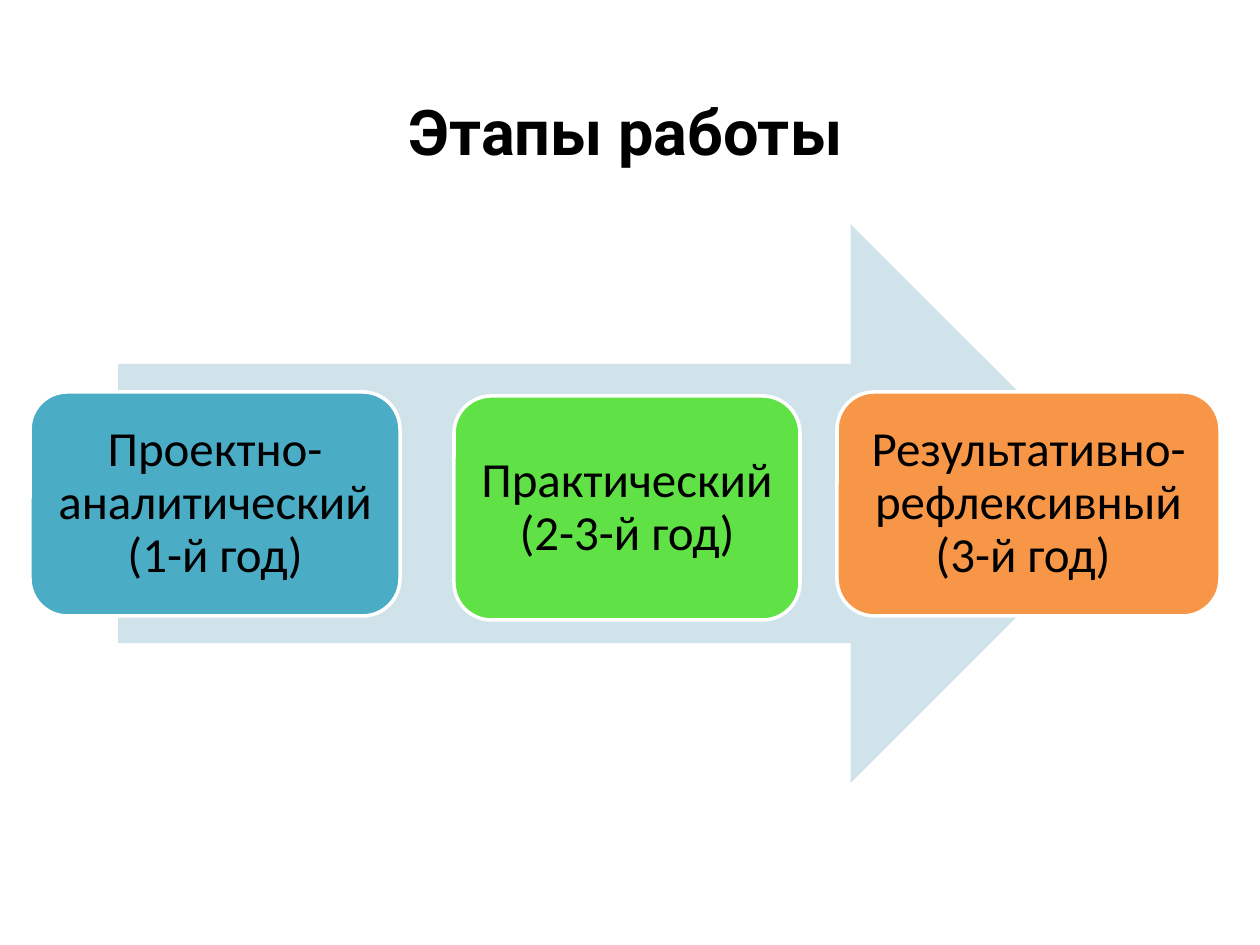
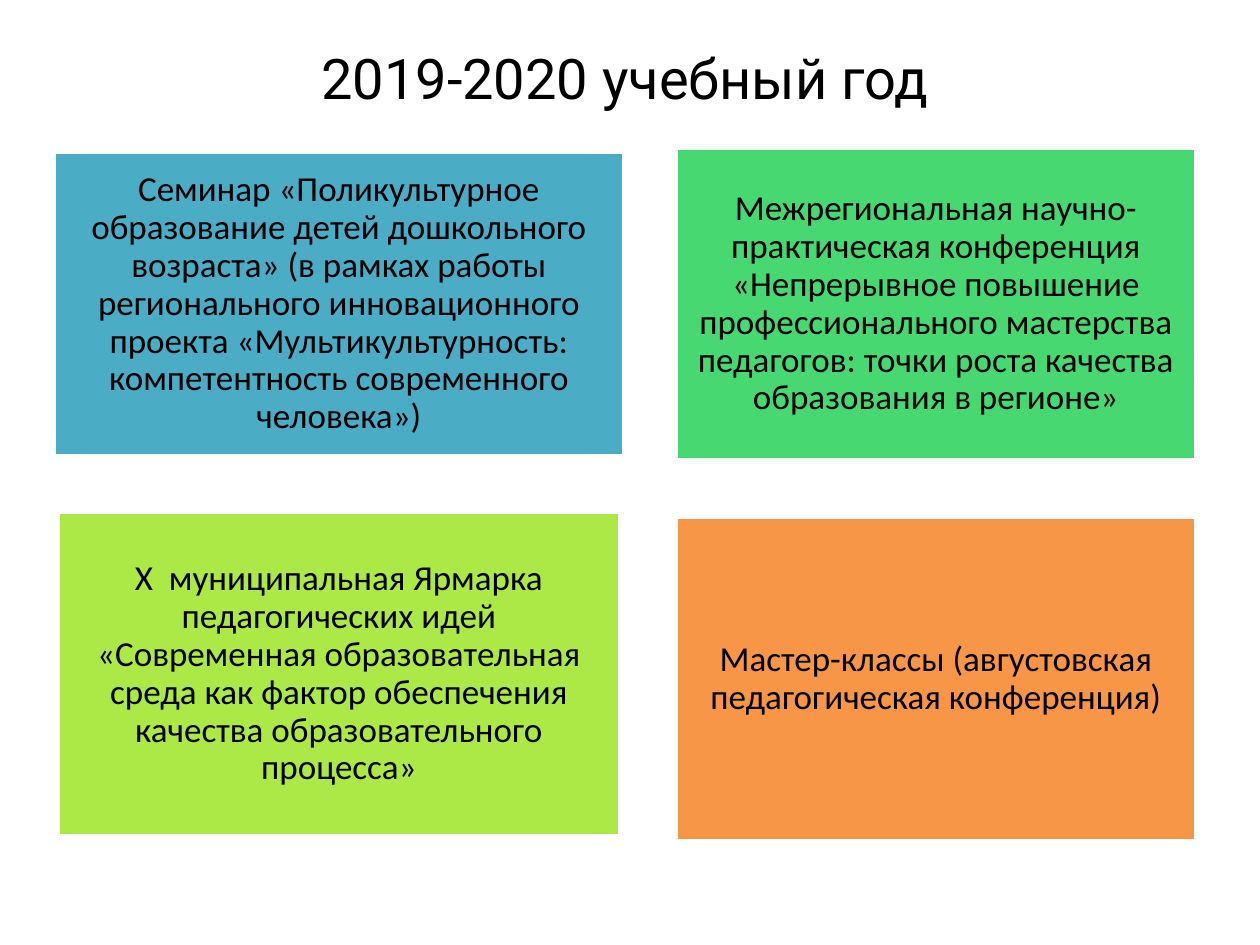
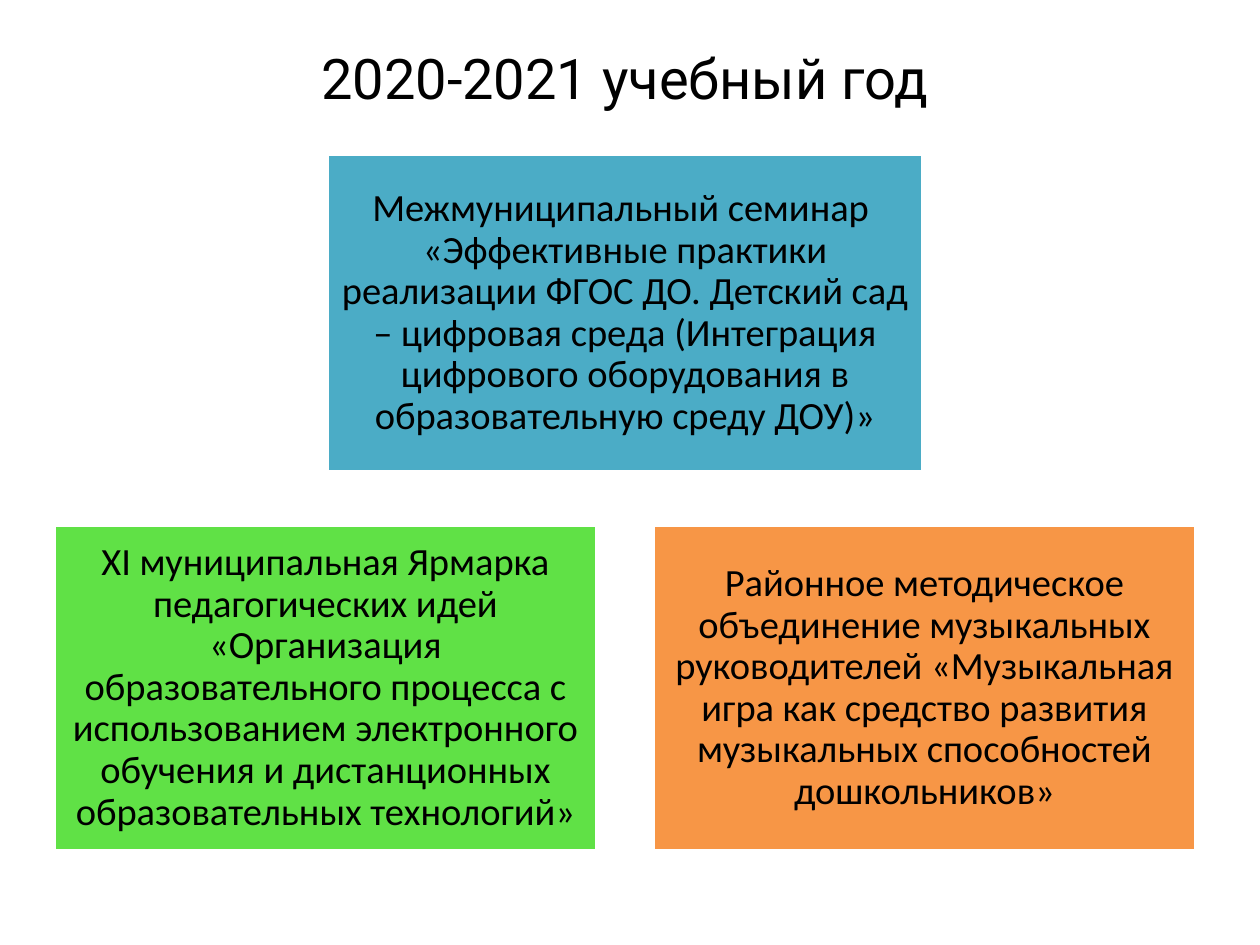
from pptx import Presentation
from pptx.dml.color import RGBColor
from pptx.enum import shapes, text
from pptx.util import Emu, Pt

PX = 914400 / 126
SLIDE_W, SLIDE_H = 1260, 945
MARGIN, GAP = 54, 56
CONTENT_W = 1142

COLORS = {
    "black": "000000",
    "white": "FFFFFF",
    "pale": "D0E3EA",
    "blue": "4BACC6",
    "green": "60E146",
    "emerald": "47D872",
    "lime": "ACE946",
    "orange": "F79646",
}
TITLE_FONT, CARD_FONT = "Roboto", "Calibri"
YEAR_TITLE_BOX = (MARGIN, 37, CONTENT_W, 81)

STAGES_TITLE = "Этапы работы"
STAGES_TITLE_BOX = (134, 86, 983, 89)
STAGES_ARROW_BOX = (118, 224, 1012, 559)
STAGE_H = 224
# left, top, width, fill, wording
STAGES = [
    (30, 392, 370, "blue", "Проектно-аналитический (1-й год)"),
    (454, 396, 346, "green", "Практический (2-3-й год)"),
    (837, 392, 383, "orange", "Результативно-рефлексивный (3-й год) "),
]

# centre x, centre y, width, height, fill, wording
LEFT_X, RIGHT_X = 339, 936
EVENTS_2019 = [
    (LEFT_X, 304, 570, 304, "blue",
     "Семинар «Поликультурное образование детей дошкольного возраста» "
     "(в рамках работы регионального инновационного проекта "
     "«Мультикультурность: компетентность современного человека»)"),
    (RIGHT_X, 304, 519, 311, "emerald",
     "Межрегиональная научно-практическая конференция «Непрерывное повышение "
     "профессионального мастерства педагогов: точки роста качества "
     "образования в регионе»"),
    (LEFT_X, 674, 561, 324, "lime",
     "X  муниципальная Ярмарка педагогических идей «Современная "
     "образовательная среда как фактор обеспечения качества "
     "образовательного процесса»"),
    (RIGHT_X, 679, 519, 324, "orange",
     "Мастер-классы (августовская педагогическая конференция)"),
]

# top, width, height, events of the row
EVENTS_2020 = [
    (154, 596, 318, [
        ("blue",
         "Межмуниципальный семинар  «Эффективные практики реализации ФГОС ДО. "
         "Детский сад – цифровая среда (Интеграция цифрового оборудования "
         "в образовательную среду ДОУ)»"),
    ]),
    (525, 543, 326, [
        ("green",
         "XI муниципальная Ярмарка педагогических идей «Организация "
         "образовательного процесса с использованием электронного обучения "
         "и дистанционных образовательных технологий»"),
        ("orange",
         "Районное методическое объединение музыкальных руководителей "
         "«Музыкальная игра как средство развития музыкальных способностей "
         "дошкольников»"),
    ]),
]


def emu(box):
    return [Emu(round(length * PX)) for length in box]


def rgb(name):
    return RGBColor.from_string(COLORS[name])


def write(frame, wording, *, size, font, bold=False, spacing=1.0,
          anchor=text.MSO_ANCHOR.TOP, inset=None):
    frame.word_wrap = True
    frame.vertical_anchor = anchor
    if inset is not None:
        (frame.margin_left, frame.margin_top,
         frame.margin_right, frame.margin_bottom) = emu([inset] * 4)
    paragraph = frame.paragraphs[0]
    paragraph.alignment = text.PP_ALIGN.CENTER
    paragraph.line_spacing = spacing
    run = paragraph.add_run()
    run.text = wording
    run.font.size = Pt(size)
    run.font.name = font
    run.font.bold = bold
    run.font.color.rgb = rgb("black")


def add_title(slide, wording, box, size=32, bold=False):
    title = slide.shapes.add_textbox(*emu(box))
    write(title.text_frame, wording, size=size, font=TITLE_FONT, bold=bold)


def add_filled(slide, kind, box, fill):
    filled = slide.shapes.add_shape(kind, *emu(box))
    filled.shadow.inherit = False
    filled.fill.solid()
    filled.fill.fore_color.rgb = rgb(fill)
    filled.line.fill.background()
    return filled


def add_card(slide, box, fill, wording, size, inset,
             kind=shapes.MSO_SHAPE.RECTANGLE):
    card = add_filled(slide, kind, box, fill)
    card.line.color.rgb = rgb("white")
    card.line.width = Pt(2)
    write(card.text_frame, wording, size=size, font=CARD_FONT, spacing=0.9,
          anchor=text.MSO_ANCHOR.MIDDLE, inset=inset)


def build_stages(slide):
    add_filled(slide, shapes.MSO_SHAPE.RIGHT_ARROW, STAGES_ARROW_BOX, "pale")
    for left, top, width, fill, wording in STAGES:
        add_card(slide, (left, top, width, STAGE_H), fill, wording, 28, 15,
                 kind=shapes.MSO_SHAPE.ROUNDED_RECTANGLE)
    add_title(slide, STAGES_TITLE, STAGES_TITLE_BOX, size=36, bold=True)


def build_2019(slide):
    for x, y, width, height, fill, wording in EVENTS_2019:
        box = (x - width / 2, y - height / 2, width, height)
        add_card(slide, box, fill, wording, 20, 10)
    add_title(slide, "2019-2020 учебный год", YEAR_TITLE_BOX)


def build_2020(slide):
    for top, width, height, events in EVENTS_2020:
        row_w = len(events) * (width + GAP) - GAP
        left = MARGIN + (CONTENT_W - row_w) / 2
        for column, (fill, wording) in enumerate(events):
            box = (left + column * (width + GAP), top, width, height)
            add_card(slide, box, fill, wording, 22, 11)
    add_title(slide, "2020-2021 учебный год", YEAR_TITLE_BOX)


def main():
    deck = Presentation()
    deck.slide_width, deck.slide_height = emu((SLIDE_W, SLIDE_H))
    blank = deck.slide_layouts[6]
    for build in (build_stages, build_2019, build_2020):
        build(deck.slides.add_slide(blank))
    deck.save("out.pptx")


if __name__ == "__main__":
    main()
